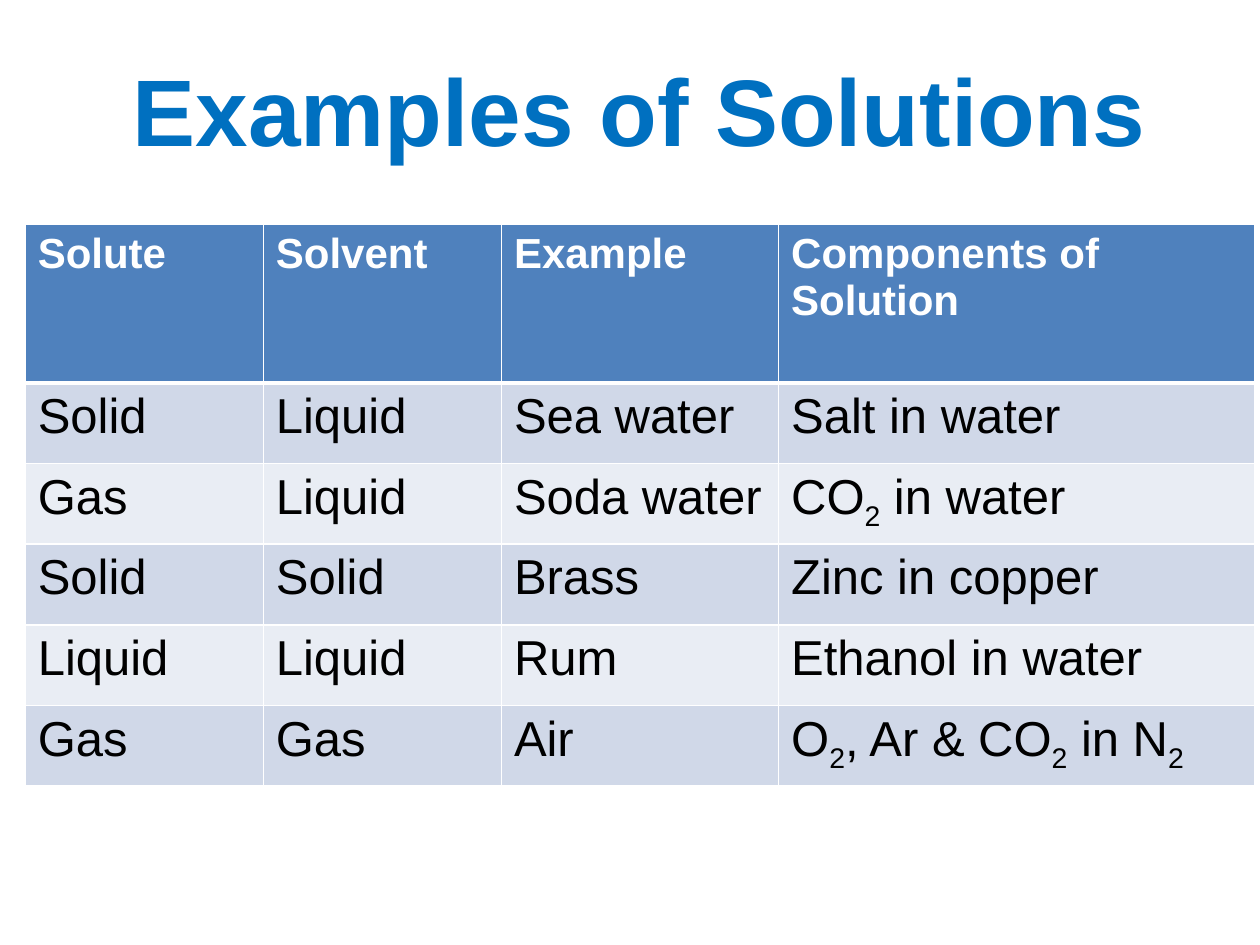
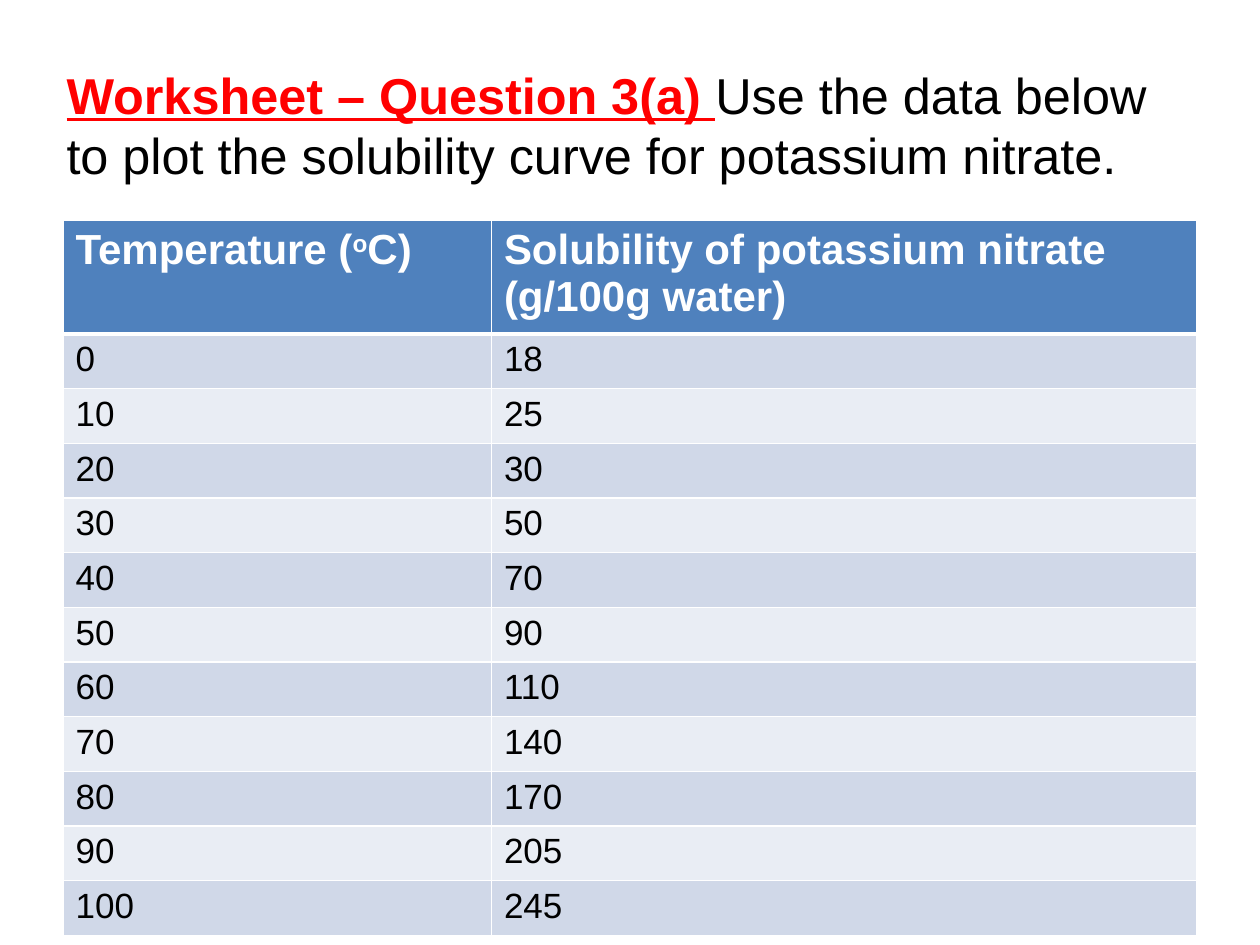
"""Build two chemistry slides: examples of solutions and a solubility worksheet."""
from dataclasses import dataclass

from lxml import etree
from pptx import Presentation
from pptx.dml.color import RGBColor
from pptx.enum.text import MSO_ANCHOR, PP_ALIGN
from pptx.oxml.ns import qn
from pptx.util import Emu, Pt

MIDDLE = MSO_ANCHOR.MIDDLE
LEFT, CENTER = PP_ALIGN.LEFT, PP_ALIGN.CENTER
EMU_PER_PX = 9144
BLANK_LAYOUT = 6


@dataclass(frozen=True)
class Theme:
    """Colours, type sizes and line widths shared by the slides."""
    font: str = "Arial"
    title: str = "0070C0"
    question: str = "FF0000"
    text: str = "000000"
    header_text: str = "FFFFFF"
    header_fill: str = "4F81BD"
    bands: tuple = ("D0D8E8", "E9EDF4")
    border: str = "FFFFFF"
    title_size: float = 54
    question_size: float = 28.8
    header_size: float = 24
    example_size: float = 28
    data_size: float = 20
    thin: float = 1
    thick: float = 3


THEME = Theme()
BASELINES = {"_": "-25000", "^": "30000"}

EXAMPLES = [
    ("Solute", "Solvent", "Example", "Components of Solution"),
    ("Solid", "Liquid", "Sea water", "Salt in water"),
    ("Gas", "Liquid", "Soda water", "CO|_2| in water"),
    ("Solid", "Solid", "Brass", "Zinc in copper"),
    ("Liquid", "Liquid", "Rum", "Ethanol in water"),
    ("Gas", "Gas", "Air", "O|_2|, Ar & CO|_2| in N|_2"),
]
SOLUBILITY_HEADER = ("Temperature (|^o|C)",
                     "Solubility of potassium nitrate\n(g/100g water)")
SOLUBILITIES = [18, 25, 30, 50, 70, 90, 110, 140, 170, 205, 245]


def px(length):
    """Turn px into EMU."""
    return Emu(length * EMU_PER_PX)


def style_run(run, size, color, bold=False, underline=False):
    """Give a run its font, size, colour and emphasis."""
    font = run.font
    font.name, font.size = THEME.font, Pt(size)
    font.bold, font.underline = bold, underline
    font.color.rgb = RGBColor.from_string(color)


def add_title(slide, box, pieces, align):
    """Add a title made of (text, size, colour, bold, underline) pieces."""
    frame = slide.shapes.add_textbox(*map(px, box)).text_frame
    frame.word_wrap = True
    frame.vertical_anchor = MIDDLE
    paragraph = frame.paragraphs[0]
    paragraph.alignment = align
    for text, *style in pieces:
        run = paragraph.add_run()
        run.text = text
        style_run(run, *style)


def write_cell(cell, content, size, color, bold):
    """Write text in which |_x| is lowered and |^x| is raised."""
    frame = cell.text_frame
    frame.text = content
    for paragraph, line in zip(frame.paragraphs, content.split("\n")):
        paragraph.text = ""
        for piece in line.split("|"):
            run = paragraph.add_run()
            run.text = piece.lstrip("_^")
            style_run(run, size, color, bold)
            if piece[0] in BASELINES:
                run.font._element.set("baseline", BASELINES[piece[0]])


def border_cell(cell, top, bottom):
    """Draw the cell's borders beneath its fill in the XML order."""
    properties = cell._tc.get_or_add_tcPr()
    widths = {"lnL": THEME.thin, "lnR": THEME.thin, "lnT": top, "lnB": bottom}
    for position, (side, width) in enumerate(widths.items()):
        line = etree.Element(qn(f"a:{side}"), w=str(Pt(width)))
        fill = etree.SubElement(line, qn("a:solidFill"))
        etree.SubElement(fill, qn("a:srgbClr"), val=THEME.border)
        properties.insert(position, line)


def add_banded_table(slide, corner, widths, heights, rows, body_size):
    """Add a table with a blue header and alternating body bands."""
    size = (sum(widths), sum(heights))
    table = slide.shapes.add_table(
        len(rows), len(widths), *map(px, corner + size)).table
    for column, width in zip(table.columns, widths):
        column.width = px(width)
    for index, (height, contents) in enumerate(zip(heights, rows)):
        table.rows[index].height = px(height)
        header = index == 0
        fill = THEME.header_fill if header else THEME.bands[(index - 1) % 2]
        size = THEME.header_size if header else body_size
        color = THEME.header_text if header else THEME.text
        top = THEME.thick if index == 1 else THEME.thin
        bottom = THEME.thick if header else THEME.thin
        for cell, content in zip(table.rows[index].cells, contents):
            cell.fill.solid()
            cell.fill.fore_color.rgb = RGBColor.from_string(fill)
            border_cell(cell, top, bottom)
            write_cell(cell, content, size, color, header)


def build_examples(slide):
    """Fill the slide with examples of solutions."""
    add_title(slide, (22, 44, 971, 85),
              [("Examples of Solutions", THEME.title_size, THEME.title, True)],
              CENTER)
    add_banded_table(slide, (20, 178), (189, 189, 220, 378),
                     [126] + [64] * 5, EXAMPLES, THEME.example_size)


def build_worksheet(slide):
    """Fill the slide with the solubility question and its data."""
    add_title(slide, (43, 36, 900, 125), [
        ("Worksheet – Question 3(a) ", THEME.question_size, THEME.question,
         True, True),
        ("Use the data below to plot the solubility curve for potassium "
         "nitrate.", THEME.question_size, THEME.text),
    ], LEFT)
    readings = [(str(10 * step), str(solubility))
                for step, solubility in enumerate(SOLUBILITIES)]
    add_banded_table(slide, (50, 175), (340, 560),
                     [83] + [41] * len(readings),
                     [SOLUBILITY_HEADER] + readings, THEME.data_size)


def main():
    """Build and save the presentation."""
    deck = Presentation()
    deck.slide_width, deck.slide_height = px(1000), px(750)
    for build in (build_examples, build_worksheet):
        build(deck.slides.add_slide(deck.slide_layouts[BLANK_LAYOUT]))
    deck.save("out.pptx")


if __name__ == "__main__":
    main()
